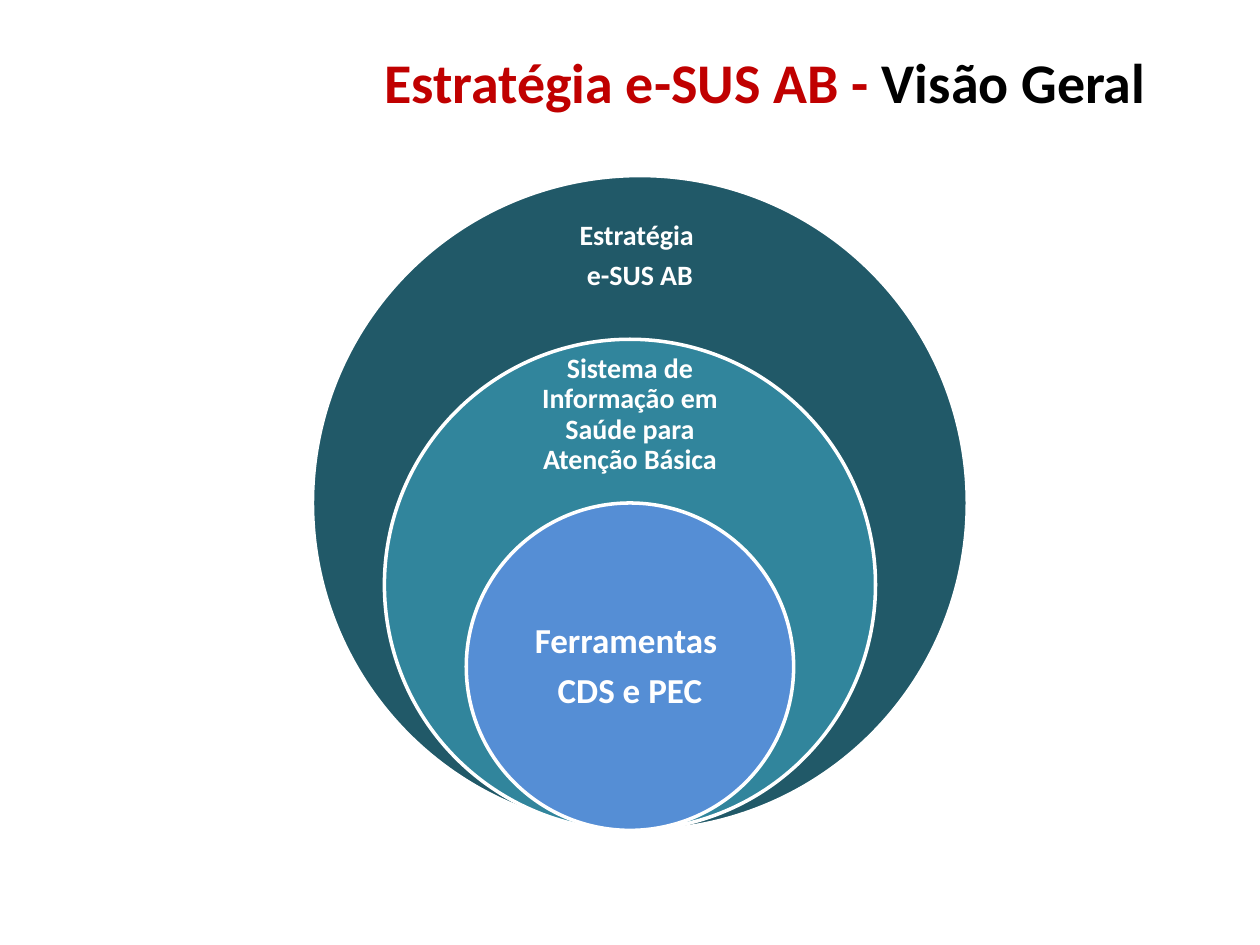
from dataclasses import dataclass

from pptx import Presentation
from pptx.dml.color import RGBColor
from pptx.enum.shapes import MSO_SHAPE
from pptx.enum.text import MSO_ANCHOR, MSO_AUTO_SIZE, PP_ALIGN
from pptx.util import Cm, Pt

ELLIPSE = MSO_SHAPE.OVAL
MIDDLE = MSO_ANCHOR.MIDDLE
NO_AUTOFIT = MSO_AUTO_SIZE.NONE
CENTER, JUSTIFY = PP_ALIGN.CENTER, PP_ALIGN.JUSTIFY
TITLE_ONLY = 5


@dataclass(frozen=True)
class Theme:
    font: str = "Calibri"
    red: str = "C00000"
    black: str = "000000"
    white: str = "FFFFFF"
    dark_teal: str = "215968"
    teal: str = "31859C"
    blue: str = "558ED5"
    title_size: int = 32
    label_size: int = 16
    core_size: int = 20
    outline: int = 2
    line_spacing: float = 0.9
    space_after: float = 0.35  # share of the type size


def set_values(target, values):
    for name, value in values.items():
        setattr(target, name, value)


class SlideBuilder:
    def __init__(self, presentation, theme):
        self.theme = theme
        layout = presentation.slide_layouts[TITLE_ONLY]
        self.slide = presentation.slides.add_slide(layout)
        self.group = None

    def start_group(self):
        self.group = self.slide.shapes.add_group_shape()

    def add_run(self, paragraph, text, size, color):
        run = paragraph.add_run()
        run.text = text
        set_values(run.font, {"name": self.theme.font, "size": Pt(size), "bold": True})
        run.font.color.rgb = RGBColor.from_string(color)

    def title(self, left, top, width, height, parts):
        title = self.slide.shapes.title
        set_values(title, {"left": Cm(left), "top": Cm(top),
                           "width": Cm(width), "height": Cm(height)})
        set_values(title.text_frame, {"vertical_anchor": MIDDLE, "word_wrap": True,
                                      "auto_size": NO_AUTOFIT})
        paragraph = title.text_frame.paragraphs[0]
        paragraph.alignment = JUSTIFY
        for text, color in parts:
            self.add_run(paragraph, text, self.theme.title_size, color)

    def circle(self, center, bottom, diameter, color):
        shape = self.group.shapes.add_shape(
            ELLIPSE, Cm(center - diameter / 2), Cm(bottom - diameter),
            Cm(diameter), Cm(diameter))
        shape.shadow.inherit = False
        shape.fill.solid()
        shape.fill.fore_color.rgb = RGBColor.from_string(color)
        shape.line.color.rgb = RGBColor.from_string(self.theme.white)
        shape.line.width = Pt(self.theme.outline)

    def label(self, center, top, width, height, lines, size, inset):
        box = self.group.shapes.add_textbox(
            Cm(center - width / 2), Cm(top), Cm(width), Cm(height))
        frame = box.text_frame
        set_values(frame, {"word_wrap": True, "auto_size": NO_AUTOFIT,
                           "vertical_anchor": MIDDLE})
        set_values(frame, {f"margin_{side}": Cm(inset)
                           for side in ("left", "top", "right", "bottom")})
        for index, text in enumerate(lines):
            paragraph = frame.add_paragraph() if index else frame.paragraphs[0]
            set_values(paragraph, {"alignment": CENTER,
                                   "line_spacing": self.theme.line_spacing,
                                   "space_after": Pt(size * self.theme.space_after)})
            self.add_run(paragraph, text, size, self.theme.white)


def main():
    theme = Theme()
    presentation = Presentation()
    set_values(presentation, {"slide_width": Cm(25.4), "slide_height": Cm(19.05)})
    builder = SlideBuilder(presentation, theme)

    # Title in two colours
    builder.title(7.49, 0.76, 16.64, 1.75,
                  [("Estratégia e-SUS AB - ", theme.red), ("Visão Geral ", theme.black)])

    # Nested circles resting on one base line, outermost first
    base, unit = 16.74, 3.3
    rings = [
        # center, units across, colour, label top, width, height, lines, size, inset
        (12.9, 4, theme.dark_teal, 4.19, 4.62, 1.98,
         ["Estratégia ", "e-SUS AB"], theme.label_size, 0.3),
        (12.7, 3, theme.teal, 7.44, 4.62, 1.85,
         ["Sistema de Informação em Saúde para Atenção Básica"], theme.label_size, 0.3),
        (12.7, 2, theme.blue, 11.79, 4.67, 3.3,
         ["Ferramentas ", "CDS e PEC"], theme.core_size, 0.41),
    ]
    builder.start_group()
    for center, units, color, top, width, height, lines, size, inset in rings:
        builder.circle(center, base, units * unit, color)
        builder.label(center, top, width, height, lines, size, inset)

    presentation.save("out.pptx")


if __name__ == "__main__":
    main()
